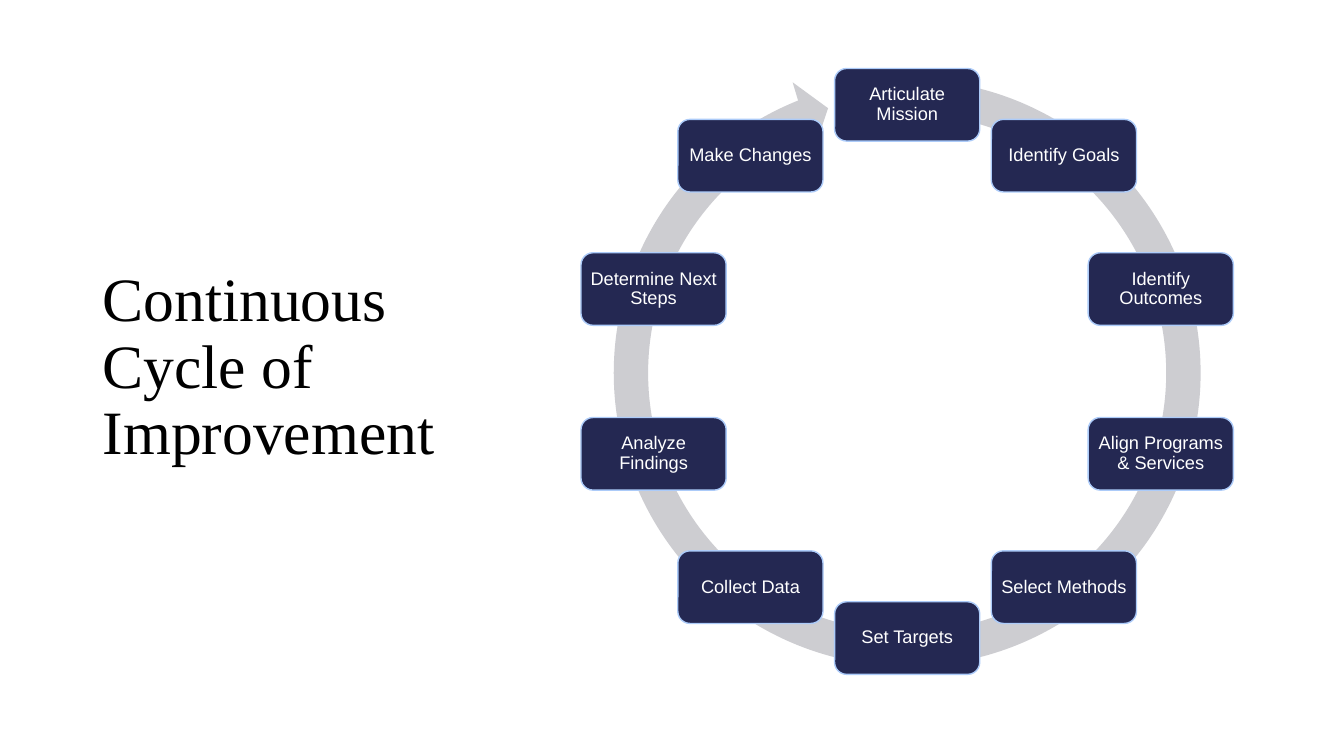
"""Build a slide that shows the continuous cycle of improvement as a ring of ten steps."""
from math import cos, pi, sin

from pptx import Presentation
from pptx.dml.color import RGBColor
from pptx.enum.shapes import MSO_SHAPE
from pptx.enum.text import MSO_ANCHOR, PP_ALIGN
from pptx.util import Inches, Pt

HUES = {"ink": "000000", "ring": "CDCDD1", "box": "242852", "edge": "ACCBF9", "pale": "FFFFFF"}
STEPS = [
    "Articulate Mission", "Identify Goals", "Identify Outcomes", "Align Programs & Services",
    "Select Methods", "Set Targets", "Collect Data", "Analyze Findings",
    "Determine Next Steps", "Make Changes",
]


def hue(name):
    return RGBColor.from_string(HUES[name])


def write(shape, text, font="Arial", size=13, color="pale", align=PP_ALIGN.CENTER, pad=0.04):
    frame = shape.text_frame
    frame.word_wrap = True
    frame.vertical_anchor = MSO_ANCHOR.MIDDLE
    frame.margin_left = frame.margin_right = Inches(pad)
    frame.margin_top = frame.margin_bottom = Inches(0.05)
    para = frame.paragraphs[0]
    para.alignment = align
    para.line_spacing = 0.9
    run = para.add_run()
    run.text = text
    run.font.name = font
    run.font.size = Pt(size)
    run.font.color.rgb = hue(color)


deck = Presentation()
deck.slide_width, deck.slide_height = Inches(13.333), Inches(7.5)
slide = deck.slides.add_slide(deck.slide_layouts[6])
col, row = deck.slide_width / 100, deck.slide_height / 100

title = slide.shapes.add_textbox(int(6.9 * col), int(8.13 * row), int(27.7 * col), int(81.2 * row))
write(title, "Continuous Cycle of Improvement", font="Times New Roman", size=44,
      color="ink", align=PP_ALIGN.LEFT, pad=0.1)

cycle = slide.shapes.add_group_shape()
mid_x, mid_y = 67.5 * col, 49.13 * row
span = 46.5 * col
ring = cycle.shapes.add_shape(MSO_SHAPE.CIRCULAR_ARROW, int(mid_x - span / 2),
                              int(8 * row), int(span), int(span))
ring.shadow.inherit = False
ring.fill.solid()
ring.fill.fore_color.rgb = hue("ring")
ring.line.fill.background()
for n, value in enumerate([0.055, 3.307, 148.712, 167.492, 0.058]):
    ring.adjustments[n] = value

reach = 35.27 * row
wide, high = 10.8 * col, 9.6 * row
for n, step in enumerate(STEPS):
    turn = 2 * pi * n / len(STEPS)
    left = mid_x + reach * sin(turn) - wide / 2
    top = mid_y - reach * cos(turn) - high / 2
    box = cycle.shapes.add_shape(MSO_SHAPE.ROUNDED_RECTANGLE, int(left), int(top),
                                 int(wide), int(high))
    box.shadow.inherit = False
    box.fill.solid()
    box.fill.fore_color.rgb = hue("box")
    box.line.color.rgb = hue("edge")
    box.line.width = Pt(1)
    write(box, step)

deck.save("out.pptx")
